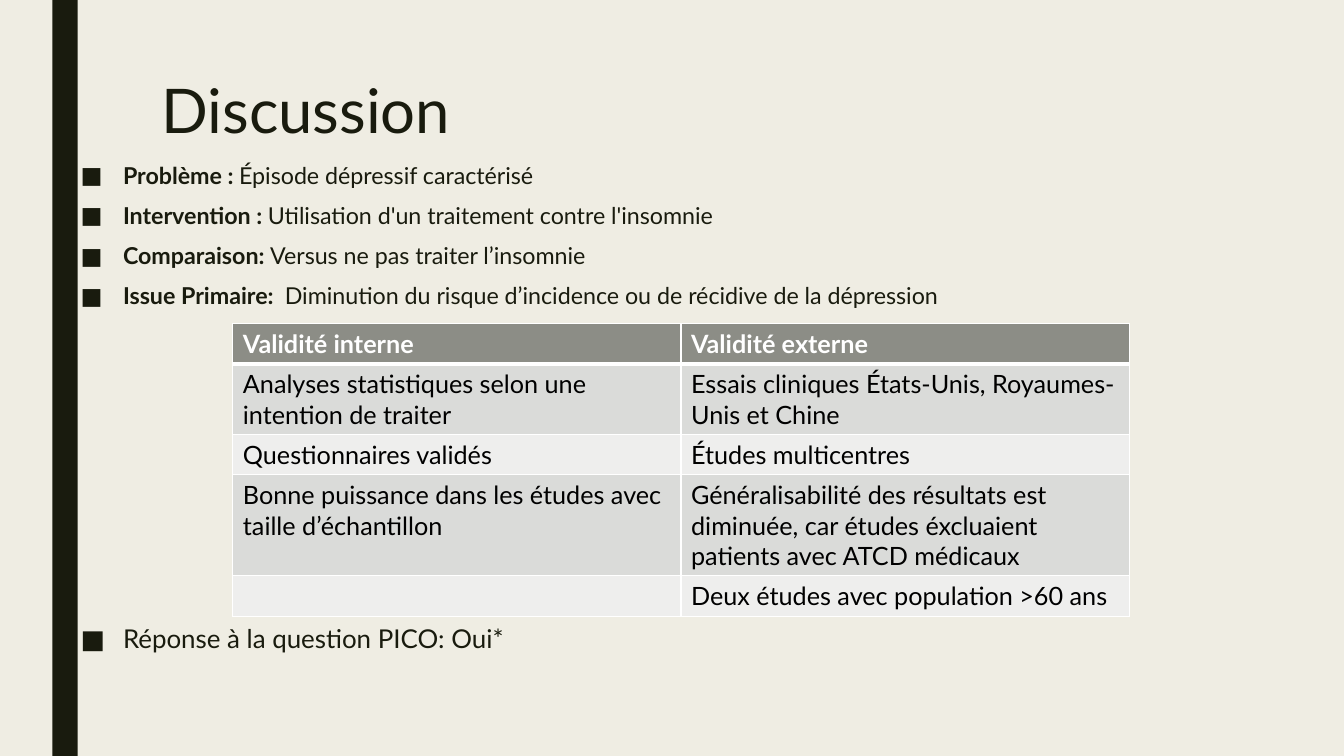
from lxml import etree
from pptx import Presentation
from pptx.dml.color import RGBColor
from pptx.enum import shapes, text
from pptx.oxml import ns
from pptx.util import Inches, Pt

INK, PAPER, WHITE, BLACK = "191B0E", "EFEDE3", "FFFFFF", "000000"
HEADER, BANDS = "8C8D86", ("DADBD9", "EEEEED")

PICO = [
    ("Problème : ", "Épisode dépressif caractérisé"),
    ("Intervention : ", "Utilisation d'un traitement contre l'insomnie"),
    ("Comparaison: ", "Versus ne pas traiter l’insomnie"),
    ("Issue Primaire: \u00a0", "Diminution du risque d’incidence ou de récidive de la dépression"),
]
ANSWER = "Réponse à la question PICO: Oui*"
VALIDITY = [
    ("Validité interne", "Validité externe"),
    ("Analyses statistiques selon une intention de traiter",
     "Essais cliniques États-Unis, Royaumes-Unis et Chine"),
    ("Questionnaires validés", "Études multicentres"),
    ("Bonne puissance dans les études avec taille d’échantillon",
     "Généralisabilité des résultats est diminuée, car études éxcluaient patients avec ATCD médicaux"),
    ("", "Deux études avec population >60 ans"),
]
ROW_HEIGHTS = [0.4, 0.7, 0.4, 1, 0.4]


def rgb(value):
    return RGBColor.from_string(value)


class Deck:
    """Holds the style and the current slide, and adds its elements."""

    font = "Lato"

    def __init__(self, prs):
        self.slide = prs.slides.add_slide(prs.slide_layouts[1])
        fill = self.slide.background.fill
        fill.solid()
        fill.fore_color.rgb = rgb(PAPER)

    def run(self, p, words, size, color=INK, bold=False):
        r = p.add_run()
        r.text = words
        r.font.name = self.font
        r.font.size = Pt(size)
        r.font.bold = bold
        r.font.color.rgb = rgb(color)

    def place(self, sp, left, top, width, height):
        sp.left, sp.top = Inches(left), Inches(top)
        sp.width, sp.height = Inches(width), Inches(height)
        tf = sp.text_frame
        tf.word_wrap = True
        tf.auto_size = text.MSO_AUTO_SIZE.NONE
        tf.vertical_anchor = text.MSO_ANCHOR.TOP
        return tf

    def bar(self, left, top, width, height):
        sp = self.slide.shapes.add_shape(
            shapes.MSO_SHAPE.RECTANGLE,
            Inches(left), Inches(top), Inches(width), Inches(height))
        sp.shadow.inherit = False
        sp.fill.solid()
        sp.fill.fore_color.rgb = rgb(INK)
        sp.line.fill.background()

    def title(self, words, *box):
        p = self.place(self.slide.shapes.title, *box).paragraphs[0]
        p.alignment = text.PP_ALIGN.LEFT
        p.line_spacing = 0.89
        self.run(p, words, 44)

    def bullets(self, items, *box):
        tf = self.place(self.slide.placeholders[1], *box)
        for i, (runs, size, before) in enumerate(items):
            p = tf.add_paragraph() if i else tf.paragraphs[0]
            p.line_spacing = 0.84
            p.space_before, p.space_after = Pt(before), Pt(2)
            pPr = p._p.get_or_add_pPr()
            pPr.set("marL", str(Inches(0.42)))
            pPr.set("indent", str(-Inches(0.42)))
            etree.SubElement(pPr, ns.qn("a:buFont"), typeface=self.font)
            etree.SubElement(pPr, ns.qn("a:buChar"), char="■")
            for words, bold in runs:
                self.run(p, words, size, bold=bold)

    def border(self, cell, side, width):
        ln = etree.SubElement(cell._tc.get_or_add_tcPr(), ns.qn("a:ln" + side), w=str(Pt(width)))
        fill = etree.SubElement(ln, ns.qn("a:solidFill"))
        etree.SubElement(fill, ns.qn("a:srgbClr"), val=WHITE)

    def table(self, rows, heights, left, top, width):
        tbl = self.slide.shapes.add_table(
            len(rows), len(rows[0]), Inches(left), Inches(top),
            Inches(width), Inches(sum(heights))).table
        tbl.horz_banding = False
        for i, (row, height) in enumerate(zip(rows, heights)):
            tbl.rows[i].height = Inches(height)
            for j, words in enumerate(row):
                cell = tbl.cell(i, j)
                widths = {"L": 1, "R": 1, "T": 3 if i == 1 else 1, "B": 1 if i else 3}
                for side, line_width in widths.items():
                    self.border(cell, side, line_width)
                cell.fill.solid()
                cell.fill.fore_color.rgb = rgb(BANDS[(i - 1) % 2] if i else HEADER)
                if words:
                    self.run(cell.text_frame.paragraphs[0], words, 18,
                             BLACK if i else WHITE, bold=i == 0)


def main():
    prs = Presentation()
    prs.slide_width, prs.slide_height = Inches(13.33), Inches(7.5)
    deck = Deck(prs)
    deck.bar(0.52, 0, 0.25, 7.5)
    deck.title("Discussion", 1.5, 0.75, 10.5, 1.62)
    items = [([(label, True), (words, False)], 16.6, 10) for label, words in PICO]
    items.append(([(ANSWER, False)], 18.5, 225))
    deck.bullets(items, 0.7, 1.59, 11.71, 5.11)
    deck.table(VALIDITY, ROW_HEIGHTS, 2.31, 3.21, 8.89)
    prs.save("out.pptx")


if __name__ == "__main__":
    main()
